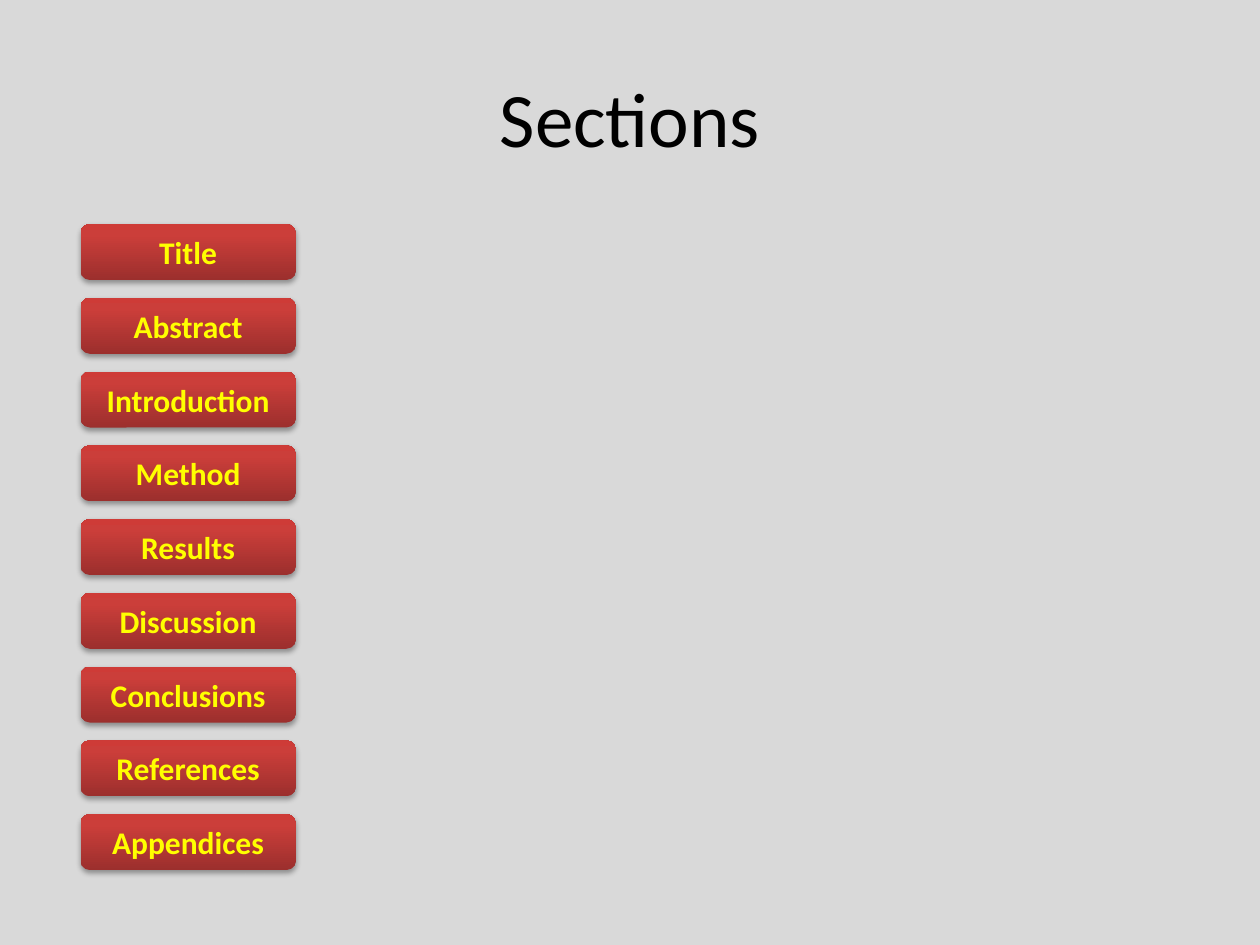
from lxml.etree import SubElement
from pptx import Presentation
from pptx.dml.color import RGBColor
from pptx.enum.shapes import MSO_SHAPE
from pptx.enum.text import MSO_ANCHOR, PP_ALIGN
from pptx.oxml import parse_xml
from pptx.oxml.ns import nsdecls, qn
from pptx.util import Pt

HUES = {
    "back": "D9D9D9", "ink": "000000", "label": "FFFF00",
    "deep": "9C2F2D", "mid": "CB3E3A", "lit": "CE3B37",
}
STOPS = ((0, "deep"), (80, "mid"), (100, "lit"))
NAMES = (
    "Title", "Abstract", "Introduction", "Method", "Results",
    "Discussion", "Conclusions", "References", "Appendices",
)


def write(shape, text, size=18, hue="ink", bold=False, hang=0):
    frame = shape.text_frame
    frame.word_wrap = True
    frame.vertical_anchor = MSO_ANCHOR.MIDDLE
    para = frame.paragraphs[0]
    para.alignment = PP_ALIGN.CENTER
    if hang:
        props = para._p.get_or_add_pPr()
        props.set("marL", str(Pt(hang)))
        props.set("indent", str(-Pt(hang)))
    run = para.add_run()
    run.text = text
    font = run.font
    font.name, font.size, font.bold = "Calibri", Pt(size), bold
    font.color.rgb = RGBColor.from_string(HUES[hue])


class Deck:
    """Holds the style and the current slide."""

    def __init__(self, wide, high):
        self.show = Presentation()
        self.show.slide_width, self.show.slide_height = Pt(wide), Pt(high)
        self.slide = self.show.slides.add_slide(self.show.slide_layouts[6])
        fill = self.slide.background.fill
        fill.solid()
        fill.fore_color.rgb = RGBColor.from_string(HUES["back"])

    def title(self, text, *box):
        shape = self.slide.shapes.add_textbox(*map(Pt, box))
        write(shape, text, size=44)

    def button(self, text, *box):
        shape = self.slide.shapes.add_shape(
            MSO_SHAPE.ROUNDED_RECTANGLE, *map(Pt, box))
        shape.line.fill.background()
        self.shade(shape)
        self.shadow(shape)
        write(shape, text, hue="label", bold=True, hang=27)

    def shade(self, shape):
        stops = "".join(
            f'<a:gs pos="{pos * 1000}"><a:srgbClr val="{HUES[hue]}"/></a:gs>'
            for pos, hue in STOPS)
        grad = parse_xml(
            f'<a:gradFill {nsdecls("a")} rotWithShape="1">'
            f'<a:gsLst>{stops}</a:gsLst>'
            '<a:lin ang="16200000" scaled="0"/></a:gradFill>')
        shape._element.spPr.find(qn("a:prstGeom")).addnext(grad)

    def shadow(self, shape):
        shape.shadow.inherit = False
        effect = shape._element.spPr.find(qn("a:effectLst"))
        drop = SubElement(
            effect, qn("a:outerShdw"), blurRad=str(Pt(3.1)),
            dist=str(Pt(1.8)), dir="5400000", rotWithShape="0")
        tint = SubElement(drop, qn("a:srgbClr"), val=HUES["ink"])
        SubElement(tint, qn("a:alpha"), val="35000")


def main():
    deck = Deck(720, 540)
    deck.title("Sections", 36, 21.6, 648, 90)
    top, step = 128, 42.15
    for row, name in enumerate(NAMES):
        deck.button(name, 46, top + row * step, 123, 32)
    deck.show.save("out.pptx")


if __name__ == "__main__":
    main()
